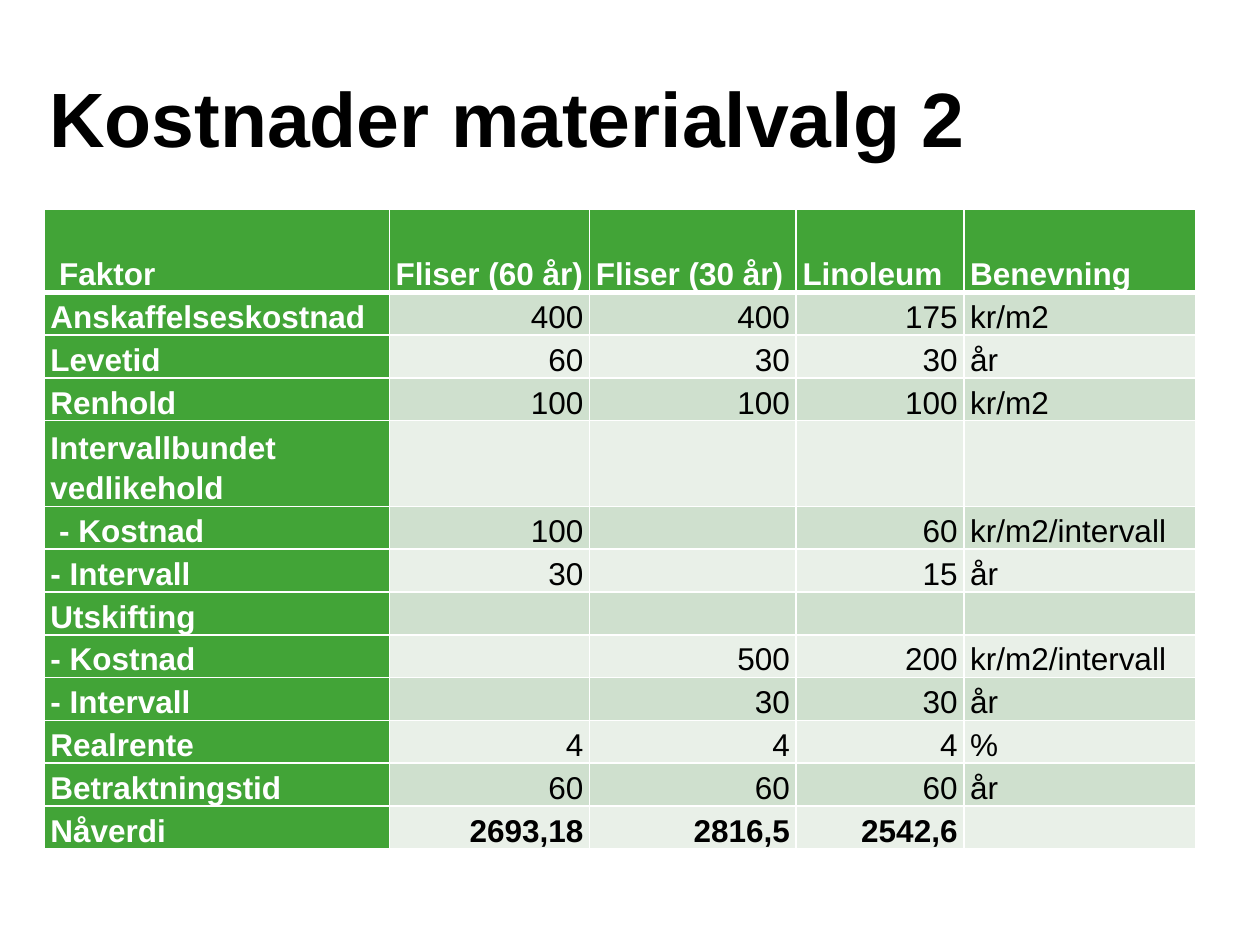
from lxml.etree import SubElement
from pptx import Presentation
from pptx.dml.color import RGBColor
from pptx.enum.text import MSO_ANCHOR, PP_ALIGN
from pptx.oxml.ns import qn
from pptx.util import Inches, Pt

# Content
TITLE = "Kostnader materialvalg 2"
HEADER = (" Faktor", "Fliser (60 år)", "Fliser (30 år)", "Linoleum", "Benevning")
COSTS = [
    ("Anskaffelseskostnad", "400", "400", "175", "kr/m2"),
    ("Levetid", "60", "30", "30", "år"),
    ("Renhold", "100", "100", "100", "kr/m2"),
    ("Intervallbundet vedlikehold", "", "", "", ""),
    (" - Kostnad", "100", "", "60", "kr/m2/intervall"),
    ("- Intervall", "30", "", "15", "år"),
    ("Utskifting", "", "", "", ""),
    ("- Kostnad", "", "500", "200", "kr/m2/intervall"),
    ("- Intervall", "", "30", "30", "år"),
    ("Realrente", "4", "4", "4", "%"),
    ("Betraktningstid", "60", "60", "60", "år"),
    ("Nåverdi", "2693,18", "2816,5", "2542,6", ""),
]
ROWS = [HEADER] + COSTS
LAST_ROW = len(ROWS) - 1

# Layout and style
COLUMN_WIDTHS = (2.74, 1.59, 1.64, 1.33, 1.84)
ROW_HEIGHT = 0.34
HEIGHT_EXCEPTIONS = {0: 0.66, 4: 0.68}
NUMBER_COLUMNS = (1, 2, 3)
FONT = "Arial"
BLACK = RGBColor(0x00, 0x00, 0x00)
WHITE = RGBColor(0xFF, 0xFF, 0xFF)
GREEN = RGBColor(0x42, 0xA4, 0x37)
BANDS = (RGBColor(0xE9, 0xF0, 0xE8), RGBColor(0xCF, 0xE0, 0xCE))


def style_font(font, size, color, bold):
    font.name = FONT
    font.size = Pt(size)
    font.bold = bold
    font.color.rgb = color


def add_borders(cell, bottom_width):
    """White lines on all sides; they must come before the fill in tcPr."""
    properties = cell._tc.get_or_add_tcPr()
    for side, width in (("L", 1), ("R", 1), ("T", 1), ("B", bottom_width)):
        line = SubElement(properties, qn(f"a:ln{side}"), w=str(Pt(width)))
        fill = SubElement(line, qn("a:solidFill"))
        SubElement(fill, qn("a:srgbClr"), val=str(WHITE))


def fill_cell(cell, wording, row, column):
    heading = row == 0 or column == 0
    add_borders(cell, 3 if row == 0 else 1)
    cell.fill.solid()
    cell.fill.fore_color.rgb = GREEN if heading else BANDS[row % 2]
    cell.margin_left = cell.margin_right = Inches(0.05)
    cell.margin_top = cell.margin_bottom = 0
    cell.vertical_anchor = MSO_ANCHOR.BOTTOM
    cell.text = wording
    paragraph = cell.text_frame.paragraphs[0]
    paragraph.line_spacing = 1.15
    if row > 0 and column in NUMBER_COLUMNS:
        paragraph.alignment = PP_ALIGN.RIGHT
    style_font(paragraph.font, 18, WHITE if heading else BLACK,
               heading or row == LAST_ROW)


def main():
    presentation = Presentation()
    presentation.slide_width = Inches(10)
    presentation.slide_height = Inches(7.5)
    slide = presentation.slides.add_slide(presentation.slide_layouts[5])

    # Title
    title = slide.shapes.title
    title.left, title.top = Inches(0.29), Inches(0.3)
    title.width, title.height = Inches(9.21), Inches(1.25)
    title.text_frame.text = TITLE
    title.text_frame.vertical_anchor = MSO_ANCHOR.MIDDLE
    heading = title.text_frame.paragraphs[0]
    heading.alignment = PP_ALIGN.LEFT
    style_font(heading.font, 44, BLACK, True)

    # Cost table
    heights = [HEIGHT_EXCEPTIONS.get(row, ROW_HEIGHT) for row in range(len(ROWS))]
    cost_table = slide.shapes.add_table(
        len(ROWS), len(HEADER), Inches(0.35), Inches(1.66),
        Inches(sum(COLUMN_WIDTHS)), Inches(sum(heights))).table
    for column, width in zip(cost_table.columns, COLUMN_WIDTHS):
        column.width = Inches(width)
    for row, height in zip(cost_table.rows, heights):
        row.height = Inches(height)
    for row, wordings in enumerate(ROWS):
        for column, wording in enumerate(wordings):
            fill_cell(cost_table.cell(row, column), wording, row, column)

    presentation.save("out.pptx")


if __name__ == "__main__":
    main()
